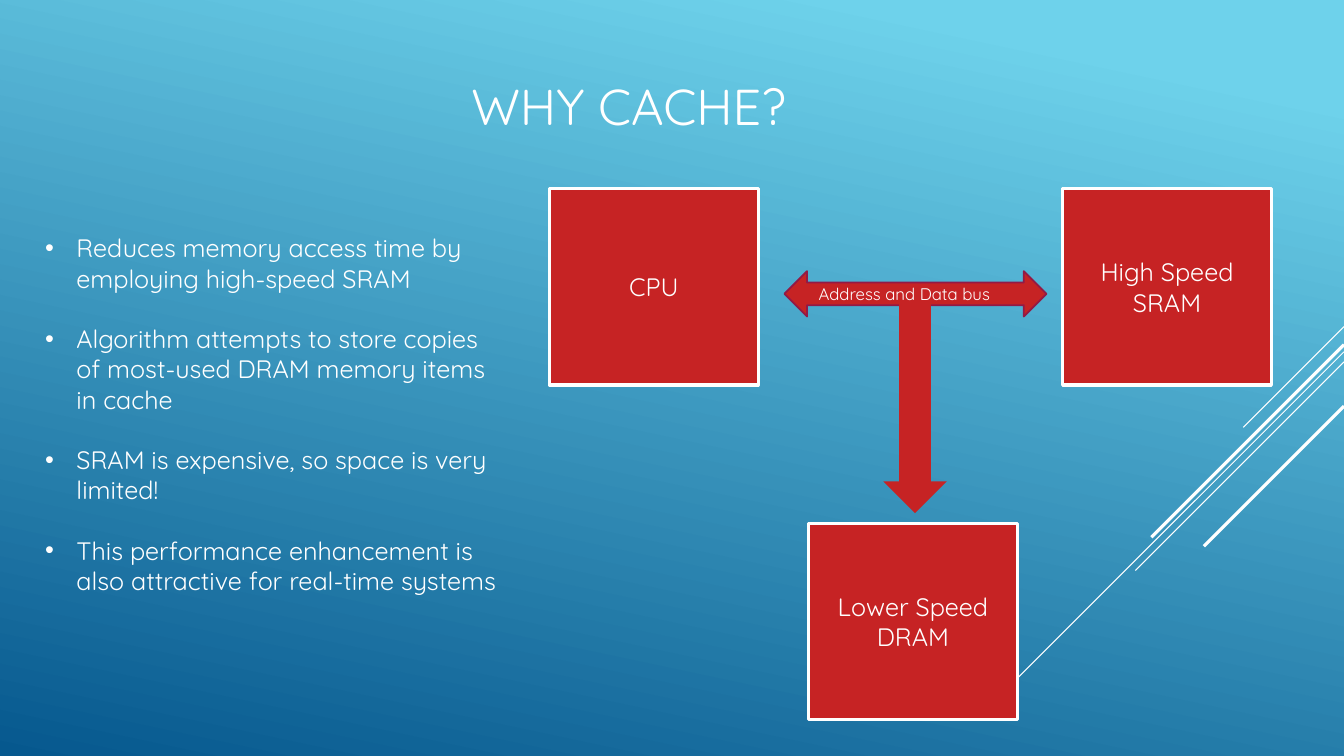
"""Build the "Why cache?" slide: bullets beside a CPU, SRAM and DRAM diagram."""
from typing import NamedTuple

from lxml import etree
from pptx import Presentation
from pptx.dml.color import RGBColor
from pptx.enum.shapes import MSO_CONNECTOR, MSO_SHAPE
from pptx.enum.text import MSO_ANCHOR, PP_ALIGN
from pptx.oxml.ns import qn
from pptx.util import Emu, Pt

STRAIGHT = MSO_CONNECTOR.STRAIGHT
RECTANGLE = MSO_SHAPE.RECTANGLE
LEFT_RIGHT_ARROW = MSO_SHAPE.LEFT_RIGHT_ARROW
RIGHT_ARROW = MSO_SHAPE.RIGHT_ARROW
TOP, MIDDLE = MSO_ANCHOR.TOP, MSO_ANCHOR.MIDDLE
LEFT, CENTER = PP_ALIGN.LEFT, PP_ALIGN.CENTER

EMU_PER_PX = 9144
SLIDE_W, SLIDE_H = 1333, 750
FONT = "Quicksand"
WHITE, RED, PLUM = "FFFFFF", "C62324", "921A46"
SKY, NAVY = "6ED2EB", "06588E"
BOX_W, BOX_H = 207, 195
BULLET_INDENT = 31
BULLET_GAP = 21.6


class Streak(NamedTuple):
    """A diagonal line running down and left from the right edge."""
    y: int
    reach: int
    weight: float


class Block(NamedTuple):
    """A labelled hardware block."""
    label: str
    x: int
    y: int


class Arrow(NamedTuple):
    """A block arrow of the bus."""
    kind: int
    x: int
    y: int
    w: int
    h: int
    rotation: int
    line: str | None


class Caption(NamedTuple):
    """A text box with one or more paragraphs."""
    lines: list[str]
    x: int
    y: int
    w: int
    h: int
    size: int
    align: int = LEFT
    anchor: int = TOP
    bulleted: bool = False


STREAKS = [
    Streak(324, 100, 0.75),
    Streak(349, 326, 0.75),
    Streak(359, 207, 0.75),
    Streak(342, 191, 2.25),
    Streak(403, 139, 2.25),
]
BLOCKS = [
    Block("CPU", 545, 187),
    Block("High Speed SRAM", 1054, 187),
    Block("Lower Speed DRAM", 802, 519),
]
ARROWS = [
    Arrow(LEFT_RIGHT_ARROW, 778, 269, 260, 45, 0, PLUM),
    Arrow(RIGHT_ARROW, 803, 373, 209, 63, 90, None),
]
TITLE = Caption(["WHY CACHE?"], 157, 22, 933, 165, 36, CENTER, MIDDLE)
BUS_LABEL = Caption(["Address and Data bus"], 802, 277, 228, 30, 12)
REASONS = Caption([
    "Reduces memory access time by employing high-speed SRAM",
    "Algorithm attempts to store copies of most-used DRAM memory items in cache",
    "SRAM is expensive, so space is very limited!",
    "This performance enhancement is also attractive for real-time systems",
], 35, 226, 479, 374, 18, bulleted=True)


def px(n: int) -> Emu:
    """Turn px into EMU."""
    return Emu(n * EMU_PER_PX)


def rgb(value: str) -> RGBColor:
    """Turn a hex string into a colour."""
    return RGBColor.from_string(value)


def paint_background(s) -> None:
    """Fill the slide with the blue gradient."""
    fill = s.background.fill
    fill.gradient()
    fill.gradient_angle = 360 - 102
    for stop, color, position in zip(fill.gradient_stops, (SKY, NAVY), (0.1, 1)):
        stop.color.rgb = rgb(color)
        stop.position = position


def add_streak(s, streak: Streak) -> None:
    """Draw one diagonal line."""
    line = s.shapes.add_connector(
        STRAIGHT, px(SLIDE_W), px(streak.y),
        px(SLIDE_W - streak.reach), px(streak.y + streak.reach))
    line.line.color.rgb = rgb(WHITE)
    line.line.width = Pt(streak.weight)
    etree.SubElement(line._element.spPr, qn("a:effectLst"))


def add_run(p, text: str, size: int) -> None:
    """Add one white run to a paragraph."""
    r = p.add_run()
    r.text = text
    r.font.name = FONT
    r.font.size = Pt(size)
    r.font.color.rgb = rgb(WHITE)


def add_bullet(p) -> None:
    """Give a paragraph a hanging round bullet."""
    pPr = p._p.get_or_add_pPr()
    pPr.set("marL", str(px(BULLET_INDENT)))
    pPr.set("indent", str(px(-BULLET_INDENT)))
    etree.SubElement(pPr, qn("a:buFont"), typeface="Arial")
    etree.SubElement(pPr, qn("a:buChar"), char="•")


def add_caption(s, caption: Caption) -> None:
    """Draw a text box."""
    sp = s.shapes.add_textbox(px(caption.x), px(caption.y), px(caption.w), px(caption.h))
    tf = sp.text_frame
    tf.word_wrap = True
    tf.vertical_anchor = caption.anchor
    for i, text in enumerate(caption.lines):
        p = tf.add_paragraph() if i else tf.paragraphs[0]
        p.alignment = caption.align
        if i:
            p.space_before = Pt(BULLET_GAP)
        if caption.bulleted:
            add_bullet(p)
        add_run(p, text, caption.size)


def add_solid(s, kind: int, x: int, y: int, w: int, h: int,
              line: str | None, weight: float):
    """Draw a red preset shape with an optional outline."""
    sp = s.shapes.add_shape(kind, px(x), px(y), px(w), px(h))
    sp.shadow.inherit = False
    sp.fill.solid()
    sp.fill.fore_color.rgb = rgb(RED)
    if line:
        sp.line.color.rgb = rgb(line)
        sp.line.width = Pt(weight)
    else:
        sp.line.fill.background()
    return sp


def add_block(s, block: Block) -> None:
    """Draw a hardware block with its label."""
    sp = add_solid(s, RECTANGLE, block.x, block.y, BOX_W, BOX_H, WHITE, 2.25)
    tf = sp.text_frame
    tf.word_wrap = True
    tf.vertical_anchor = MIDDLE
    p = tf.paragraphs[0]
    p.alignment = CENTER
    add_run(p, block.label, 18)


def main() -> None:
    """Build and save the slide."""
    prs = Presentation()
    prs.slide_width, prs.slide_height = px(SLIDE_W), px(SLIDE_H)
    s = prs.slides.add_slide(prs.slide_layouts[6])
    paint_background(s)
    for streak in STREAKS:
        add_streak(s, streak)
    add_caption(s, TITLE)
    for block in BLOCKS:
        add_block(s, block)
    for a in ARROWS:
        add_solid(s, a.kind, a.x, a.y, a.w, a.h, a.line, 1.25).rotation = a.rotation
    add_caption(s, BUS_LABEL)
    add_caption(s, REASONS)
    prs.save("out.pptx")


if __name__ == "__main__":
    main()
